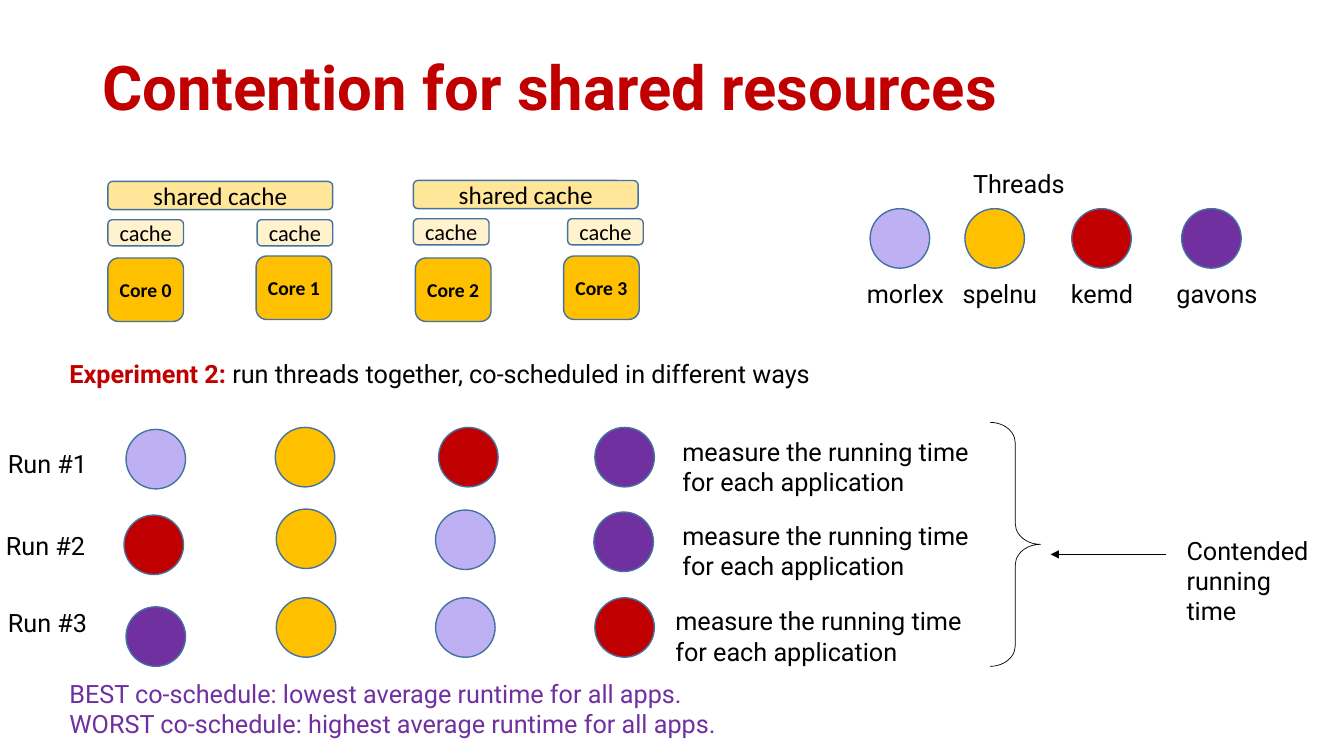
import pptx
import pptx.util
import pptx.dml.color
import pptx.enum.shapes
import pptx.enum.text
import pptx.oxml

EMU_PER_PX = 9144
SHAPES = pptx.enum.shapes.MSO_SHAPE
ALIGN = pptx.enum.text.PP_ALIGN
ANCHOR = pptx.enum.text.MSO_ANCHOR
BLACK, RED, PURPLE, GOLD, LILAC = "000000", "C00000", "7030A0", "FFC000", "BEB1F3"
OUTLINE = "43739E"
DISC = 59
THREADS = {"morlex": LILAC, "spelnu": GOLD, "kemd": RED, "gavons": PURPLE}


def px(length):
    return pptx.util.Emu(length * EMU_PER_PX)


def rgb(value):
    return pptx.dml.color.RGBColor.from_string(value)


def add_run(paragraph, text, size, color, bold=False, font="Roboto"):
    for index, line in enumerate(text.split("\n")):
        if index:
            paragraph.add_line_break()
        run = paragraph.add_run()
        run.text = line
        run.font.name = font
        run.font.size = pptx.util.Pt(size)
        run.font.bold = bold
        run.font.color.rgb = rgb(color)


def add_label(slide, box, paragraphs, size=18, align=ALIGN.LEFT, anchor=ANCHOR.TOP):
    label = slide.shapes.add_textbox(*map(px, box))
    frame = label.text_frame
    frame.word_wrap = True
    frame.vertical_anchor = anchor
    for index, runs in enumerate(paragraphs):
        paragraph = frame.add_paragraph() if index else frame.paragraphs[0]
        paragraph.alignment = align
        for text, color, bold in runs:
            add_run(paragraph, text, size, color, bold)
    return label


def add_filled(slide, kind, box, fill):
    shape = slide.shapes.add_shape(kind, *map(px, box))
    shape.shadow.inherit = False
    shape.fill.solid()
    shape.fill.fore_color.rgb = rgb(fill)
    shape.line.color.rgb = rgb(OUTLINE)
    shape.line.width = pptx.util.Pt(1)
    return shape


def add_block(slide, box, fill, text, size, bold=False):
    frame = add_filled(slide, SHAPES.ROUNDED_RECTANGLE, box, fill).text_frame
    frame.margin_left = frame.margin_right = frame.margin_top = frame.margin_bottom = 0
    frame.vertical_anchor = ANCHOR.MIDDLE
    frame.paragraphs[0].alignment = ALIGN.CENTER
    add_run(frame.paragraphs[0], text, size, BLACK, bold, "Calibri")


def add_disc(slide, left, top, thread):
    add_filled(slide, SHAPES.OVAL, (left, top, DISC, DISC), THREADS[thread])


def title(slide, box):
    heading = add_label(slide, box, [[("Contention for shared resources", RED, True)]],
                        size=44, anchor=ANCHOR.MIDDLE)
    heading.text_frame.paragraphs[0].line_spacing = 0.9


def chip(slide, box, first_core, cache_step, core_left, core_top):
    left, top, width, height = box
    add_block(slide, (left, top, width, 28), "FFE699", "shared cache", 18)
    for index in range(2):
        add_block(slide, (left + index * cache_step, top + 38, 75, 26), "FFF2CC", "cache", 16)
        add_block(slide, (left + core_left + index * 147, top + core_top - index * 2, 75, 63),
                  GOLD, f"Core {first_core + index}", 14, True)


def thread_legend(slide, box):
    left, top, width, height = box
    add_label(slide, (left + 48, top, 225, 40), [[("Threads", BLACK, False)]],
              align=ALIGN.CENTER)
    places = [(13, 0, 100, ALIGN.LEFT), (107, 95, 100, ALIGN.LEFT),
              (213, 195, 96, ALIGN.CENTER), (322, 297, 120, ALIGN.CENTER)]
    for thread, (disc_left, name_left, name_width, align) in zip(THREADS, places):
        add_disc(slide, left + disc_left, top + 45, thread)
        add_label(slide, (left + name_left, top + 109, name_width, 40),
                  [[(thread, BLACK, False)]], align=align)


def experiment(slide, box):
    add_label(slide, box, [[
        ("Experiment 2:", RED, True),
        (" run threads together, co-scheduled in different ways", BLACK, False)]])


def run_row(slide, box, number, name_top, discs, measure_left, measure_top):
    left, top, width, height = box
    add_label(slide, (left, top + name_top, 127, 40), [[(f"Run #{number}", BLACK, False)]])
    for thread, disc_left, disc_top in discs:
        add_disc(slide, left + disc_left, top + disc_top, thread)
    add_label(slide, (left + measure_left, top + measure_top, 343, 71),
              [[("measure the running time\nfor each application", BLACK, False)]])


def contended_time(slide, box):
    left, top, width, height = box
    brace = slide.shapes.add_shape(SHAPES.RIGHT_BRACE, *map(px, (left, top, 50, height)))
    brace.shadow.inherit = False
    brace.adjustments[0] = 0.41
    brace.adjustments[1] = 0.5
    brace.fill.background()
    arrow = slide.shapes.add_connector(
        pptx.enum.shapes.MSO_CONNECTOR.STRAIGHT,
        *map(px, (left + 174, top + 131, left + 60, top + 131)))
    for stroke in (brace.line, arrow.line):
        stroke.color.rgb = rgb(BLACK)
        stroke.width = pptx.util.Pt(0.5)
    namespace = pptx.oxml.ns.nsdecls("a")
    arrow.line._get_or_add_ln().append(
        pptx.oxml.parse_xml(f'<a:tailEnd {namespace} type="triangle"/>'))
    arrow._element.spPr.append(pptx.oxml.parse_xml(f"<a:effectLst {namespace}/>"))
    add_label(slide, (left + 185, top + 107, 157, 71),
              [[("Contended running time", BLACK, False)]])


def conclusion(slide, box):
    add_label(slide, box, [
        [("BEST co-schedule: lowest average runtime for all apps.", PURPLE, False)],
        [("WORST co-schedule: highest average runtime for all apps.", PURPLE, False)]])


def main():
    deck = pptx.Presentation()
    deck.slide_width, deck.slide_height = px(1333), px(750)
    slide = deck.slides.add_slide(deck.slide_layouts[6])
    title(slide, (92, 17, 1150, 145))
    chip(slide, (107, 180, 223, 139), 0, 148, 0, 76)
    chip(slide, (410, 179, 223, 140), 2, 153, 2, 77)
    thread_legend(slide, (850, 162, 417, 149))
    experiment(slide, (59, 351, 791, 40))
    run_row(slide, (-2, 424, 1012, 75), 1, 16,
            [("morlex", 127, 2), ("spelnu", 275, 0), ("kemd", 437, 0), ("gavons", 592, 0)],
            669, 4)
    run_row(slide, (-4, 505, 1014, 77), 2, 16,
            [("kemd", 127, 6), ("spelnu", 278, 0), ("morlex", 436, 1), ("gavons", 593, 3)],
            671, 6)
    run_row(slide, (-2, 593, 1005, 74), 3, 5,
            [("gavons", 127, 9), ("spelnu", 276, 0), ("morlex", 434, 0), ("kemd", 592, 0)],
            662, 3)
    contended_time(slide, (982, 419, 342, 242))
    conclusion(slide, (59, 668, 1216, 71))
    deck.save("out.pptx")


if __name__ == "__main__":
    main()
